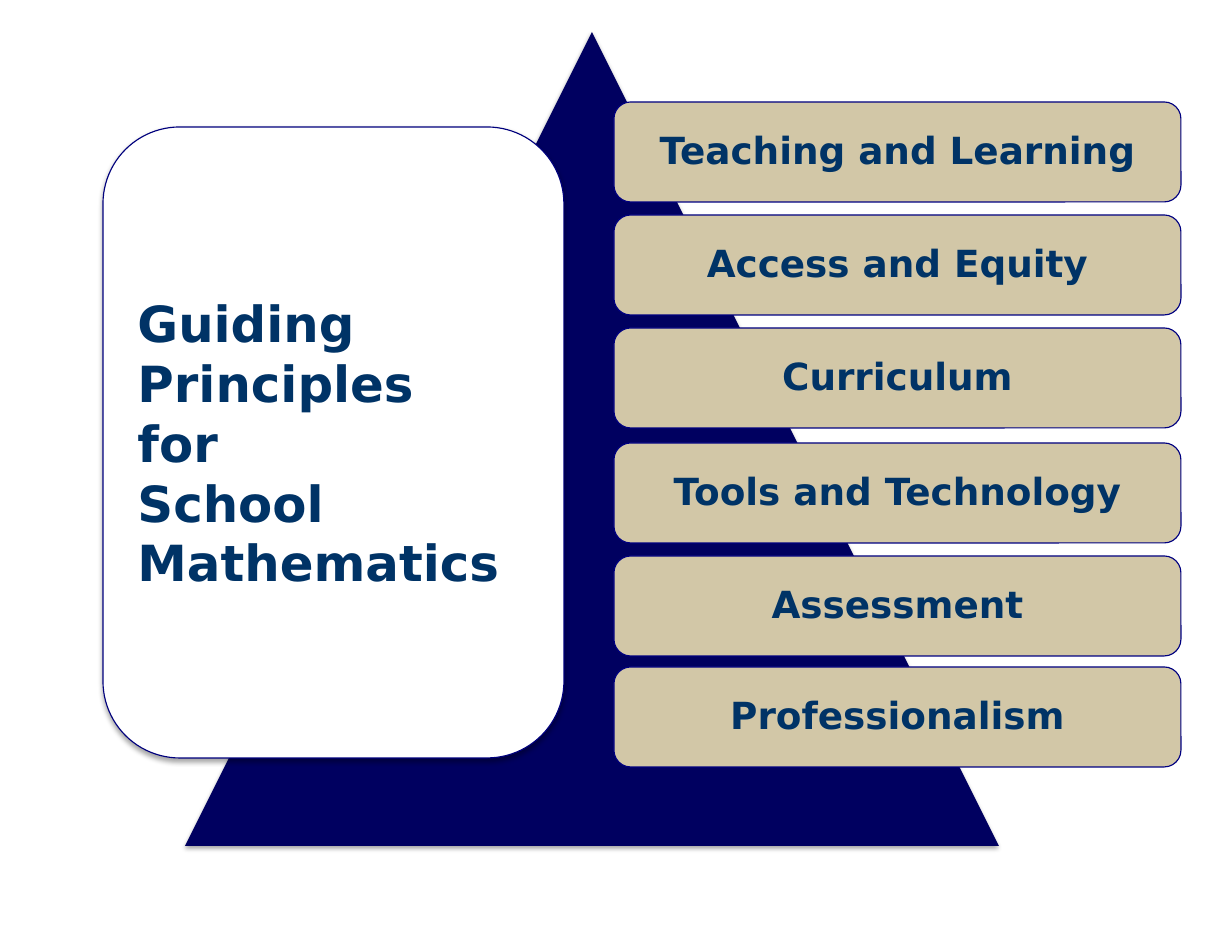
from lxml.etree import SubElement
from pptx import Presentation
from pptx.dml.color import RGBColor
from pptx.enum.shapes import MSO_SHAPE as Kind
from pptx.enum.text import MSO_ANCHOR as Anchor, PP_ALIGN as Align
from pptx.oxml.ns import qn
from pptx.util import Pt

PX = 914400 // 112
FONT, INK = "DejaVu Sans", "003366"
TITLE = ["Guiding", "Principles", "for", "School", "Mathematics"]
BARS = [  # label, top
    ("Teaching and Learning", 102),
    ("Access and Equity", 215),
    ("Curriculum", 328),
    ("Tools and Technology", 443),
    ("Assessment", 556),
    ("Professionalism", 667),
]


def paint(hue):
    return RGBColor.from_string(hue)


def add_shape(kind, box, fill, line=None):
    shape = slide.shapes.add_shape(kind, *(n * PX for n in box))
    shape.shadow.inherit = False
    shape.fill.solid()
    shape.fill.fore_color.rgb = paint(fill)
    if line:
        shape.line.color.rgb = paint(line)
        shape.line.width = Pt(0.75)
    else:
        shape.line.fill.background()
    return shape


def add_shadow(shape):
    """Give the shape a soft shadow straight below it."""
    effects = shape._element.spPr.find(qn("a:effectLst"))
    outer = SubElement(effects, qn("a:outerShdw"), blurRad=str(Pt(3.1)),
                       dist=str(Pt(1.8)), dir="5400000", rotWithShape="0")
    color = SubElement(outer, qn("a:srgbClr"), val="000000")
    SubElement(color, qn("a:alpha"), val="35000")


def write(shape, lines, size, align, inset, spacing=None):
    frame = shape.text_frame
    frame.word_wrap = True
    frame.vertical_anchor = Anchor.MIDDLE
    frame.margin_left = frame.margin_right = inset[0] * PX
    frame.margin_top = frame.margin_bottom = inset[1] * PX
    for i, text in enumerate(lines):
        para = frame.add_paragraph() if i else frame.paragraphs[0]
        para.alignment = align
        para.line_spacing = spacing
        run = para.add_run()
        run.text = text
        font = run.font
        font.name, font.size, font.bold = FONT, Pt(size), True
        font.color.rgb = paint(INK)


deck = Presentation()
deck.slide_width, deck.slide_height = 1232 * PX, 952 * PX
slide = deck.slides.add_slide(deck.slide_layouts[6])

peak = add_shape(Kind.ISOSCELES_TRIANGLE, (185, 32, 814, 814), "000060")
add_shadow(peak)

for label, top in BARS:
    bar = add_shape(Kind.ROUNDED_RECTANGLE, (614, top, 567, 100),
                    "D2C7A7", "000080")
    write(bar, [label], 24, Align.CENTER, (11, 11), 0.9)

card = add_shape(Kind.ROUNDED_RECTANGLE, (103, 127, 461, 631),
                 "FFFFFF", "00007D")
add_shadow(card)
write(card, TITLE, 32, Align.LEFT, (12, 6))

deck.save("out.pptx")
